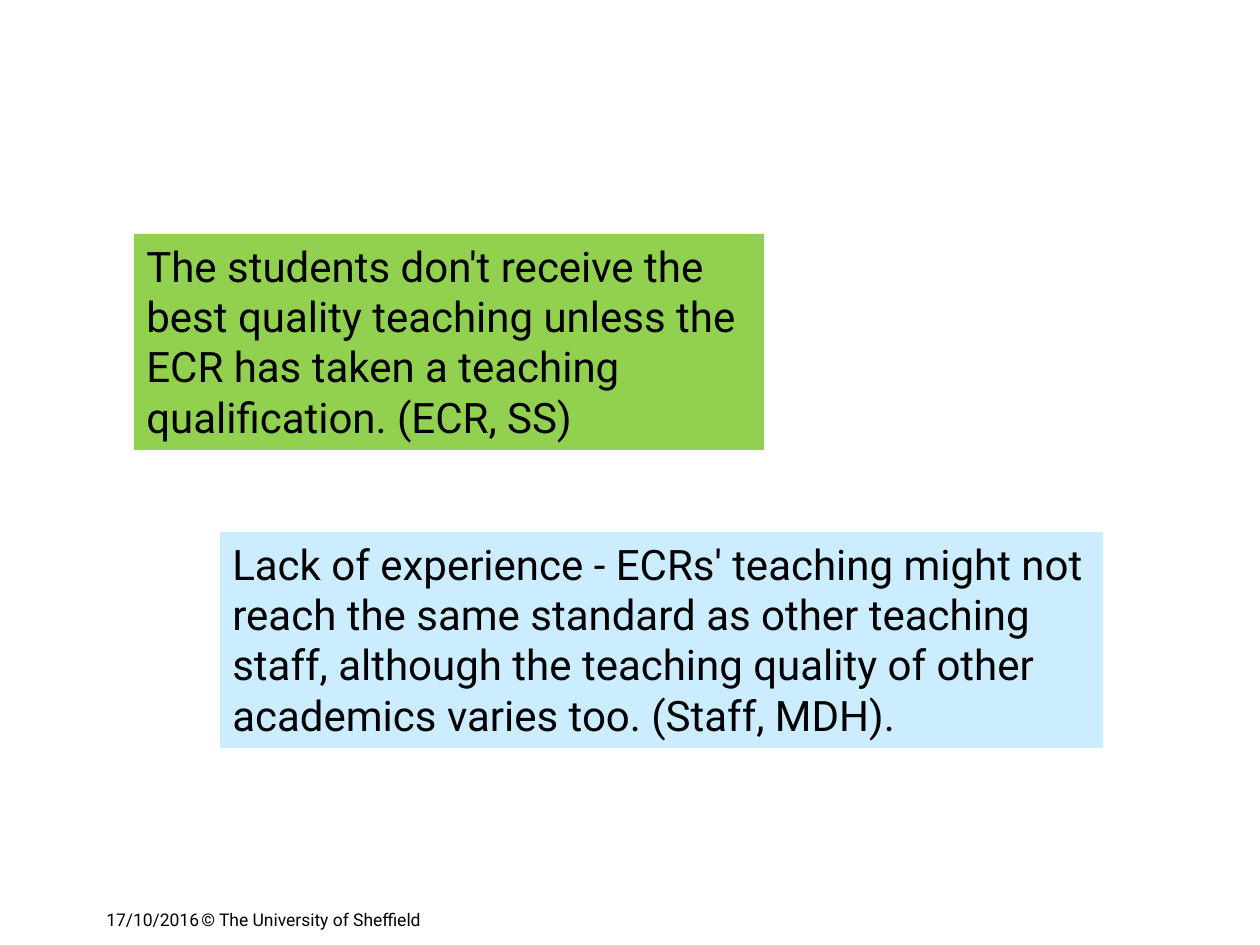
from pptx import Presentation
from pptx.dml.color import RGBColor
from pptx.enum.text import MSO_ANCHOR, PP_ALIGN
from pptx.util import Pt

SCALE = 914400 / 126
SIZE = (1260, 945)

QUOTES = [
    ("The students don't receive the best quality teaching unless the ECR has taken "
     "a teaching qualification. (ECR, SS)", (134, 234, 630, 216), "92D050"),
    ("Lack of experience - ECRs' teaching might not reach the same standard as other "
     "teaching staff, although the teaching quality of other academics varies too. "
     "(Staff, MDH).", (220, 532, 883, 216), "CCECFF"),
]
FOOTER = [
    ("17/10/2016", (94, 903, 126, 42), None),
    ("© The University of Sheffield", (189, 903, 714, 42), None),
]
FRAME = {"word_wrap": True, "vertical_anchor": MSO_ANCHOR.TOP}
QUOTE_FONT = {"name": "Roboto", "size": Pt(24)}
FOOTER_FONT = {"name": "Roboto", "size": Pt(10)}


def px(value):
    return round(value * SCALE)


def color(code):
    return RGBColor.from_string(code)


def apply(target, values):
    for key, value in values.items():
        setattr(target, key, value)


def add_text(slide, text, place, fill, font):
    box = slide.shapes.add_textbox(*map(px, place))
    if fill:
        box.fill.solid()
        box.fill.fore_color.rgb = color(fill)
    frame = box.text_frame
    apply(frame, FRAME)
    line = frame.paragraphs[0]
    line.alignment = PP_ALIGN.LEFT
    run = line.add_run()
    run.text = text
    apply(run.font, font)
    run.font.color.rgb = color("000000")


def main():
    deck = Presentation()
    deck.slide_width, deck.slide_height = map(px, SIZE)
    slide = deck.slides.add_slide(deck.slide_layouts[6])
    for items, font in ((FOOTER, FOOTER_FONT), (QUOTES, QUOTE_FONT)):
        for text, place, fill in items:
            add_text(slide, text, place, fill, font)
    deck.save("out.pptx")


if __name__ == "__main__":
    main()
